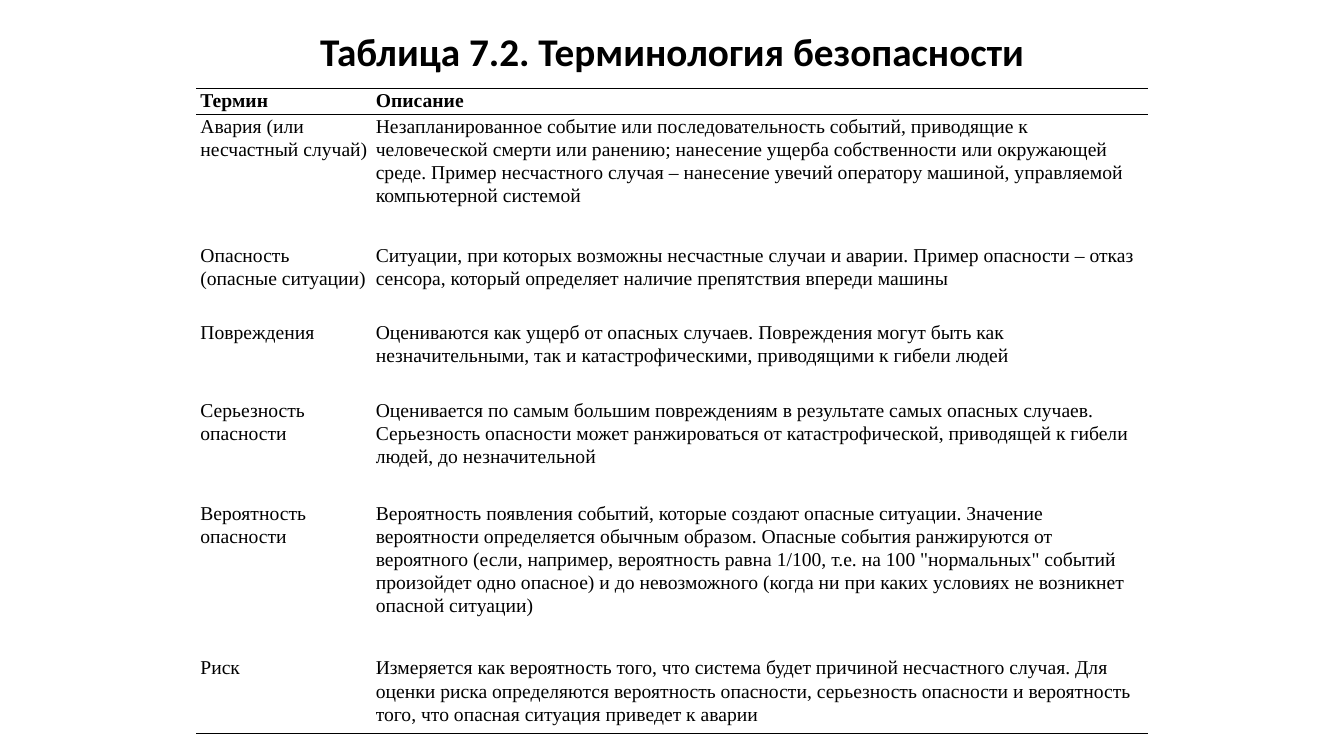
from dataclasses import dataclass

from lxml.etree import SubElement
from pptx import Presentation
from pptx.dml.color import RGBColor
from pptx.enum.text import PP_ALIGN
from pptx.oxml import parse_xml
from pptx.oxml.ns import nsdecls, qn
from pptx.util import Cm, Pt

TITLE = "Таблица 7.2. Терминология безопасности"

# term, description, row height in cm
ROWS = [
    ("Термин", "Описание", 0.65),
    ("Авария (или несчастный случай)",
     "Незапланированное событие или последовательность событий, приводящие к "
     "человеческой смерти или ранению; нанесение ущерба собственности или окружающей "
     "среде. Пример несчастного случая – нанесение увечий оператору машиной, "
     "управляемой компьютерной системой", 3.25),
    ("Опасность (опасные ситуации)",
     "Ситуации, при которых возможны несчастные случаи и аварии. Пример опасности – "
     "отказ сенсора, который определяет наличие препятствия впереди машины", 1.95),
    ("Повреждения",
     "Оцениваются как ущерб от опасных случаев. Повреждения могут быть как "
     "незначительными, так и катастрофическими, приводящими к гибели людей", 1.95),
    ("Серьезность опасности",
     "Оценивается по самым большим повреждениям в результате самых опасных случаев. "
     "Серьезность опасности может ранжироваться от катастрофической, приводящей к "
     "гибели людей, до незначительной", 2.6),
    ("Вероятность опасности",
     "Вероятность появления событий, которые создают опасные ситуации. Значение "
     "вероятности определяется обычным образом. Опасные события ранжируются от "
     "вероятного (если, например, вероятность равна 1/100, т.е. на 100 \"нормальных\" "
     "событий произойдет одно опасное) и до невозможного (когда ни при каких условиях "
     "не возникнет опасной ситуации)", 3.9),
    ("Риск",
     "Измеряется как вероятность того, что система будет причиной несчастного случая. "
     "Для оценки риска определяются вероятность опасности, серьезность опасности и "
     "вероятность того, что опасная ситуация приведет к аварии", 1.95),
]
COLS = (4.42, 19.56)
TABLE_LEFT, TABLE_TOP = 4.95, 2.23


@dataclass(frozen=True)
class Theme:
    ink: str = "000000"
    paper: str = "FFFFFF"
    title_font: str = "Calibri"
    table_font: str = "Times New Roman"
    title_size: float = 28
    table_size: float = 14
    rule: float = 1


T = Theme()


def write(tf, text, font=T.table_font, size=T.table_size, bold=False,
          align=PP_ALIGN.LEFT, spacing=1.07):
    tf.word_wrap = True
    p = tf.paragraphs[0]
    p.alignment, p.line_spacing = align, spacing
    r = p.add_run()
    r.text = text
    r.font.name, r.font.size, r.font.bold = font, Pt(size), bold
    r.font.color.rgb = RGBColor.from_string(T.ink)


def set_borders(cell, ruled):
    """Draw the sides named in ruled (T, B) and clear the others."""
    tcPr = cell._tc.get_or_add_tcPr()
    for i, side in enumerate("LRTB"):
        ln = parse_xml(f'<a:ln{side} {nsdecls("a")} w="{Pt(T.rule)}"/>')
        if side in ruled:
            fill = SubElement(ln, qn("a:solidFill"))
            SubElement(fill, qn("a:srgbClr"), val=T.ink)
        else:
            SubElement(ln, qn("a:noFill"))
        tcPr.insert(i, ln)


def add_terms(s):
    heights = [row[-1] for row in ROWS]
    table = s.shapes.add_table(len(ROWS), len(COLS), Cm(TABLE_LEFT), Cm(TABLE_TOP),
                               Cm(sum(COLS)), Cm(sum(heights))).table
    table.horz_banding = table.first_row = False
    for col, width in zip(table.columns, COLS):
        col.width = Cm(width)
    ruled = {0: "TB", 1: "T", len(ROWS) - 1: "B"}
    for i, (*texts, height) in enumerate(ROWS):
        table.rows[i].height = Cm(height)
        for j, text in enumerate(texts):
            cell = table.cell(i, j)
            cell.margin_left = cell.margin_right = Cm(0.1)
            cell.margin_top = cell.margin_bottom = 0
            cell.fill.solid()
            cell.fill.fore_color.rgb = RGBColor.from_string(T.paper)
            set_borders(cell, ruled.get(i, ""))
            write(cell.text_frame, text, bold=i == 0)


def main():
    prs = Presentation()
    prs.slide_width, prs.slide_height = Cm(33.87), Cm(19.05)
    s = prs.slides.add_slide(prs.slide_layouts[6])
    sp = s.shapes.add_textbox(Cm(2.33), Cm(0.71), Cm(29.21), Cm(1.5))
    write(sp.text_frame, TITLE, font=T.title_font, size=T.title_size, bold=True,
          align=PP_ALIGN.CENTER, spacing=0.9)
    add_terms(s)
    prs.save("out.pptx")


if __name__ == "__main__":
    main()
